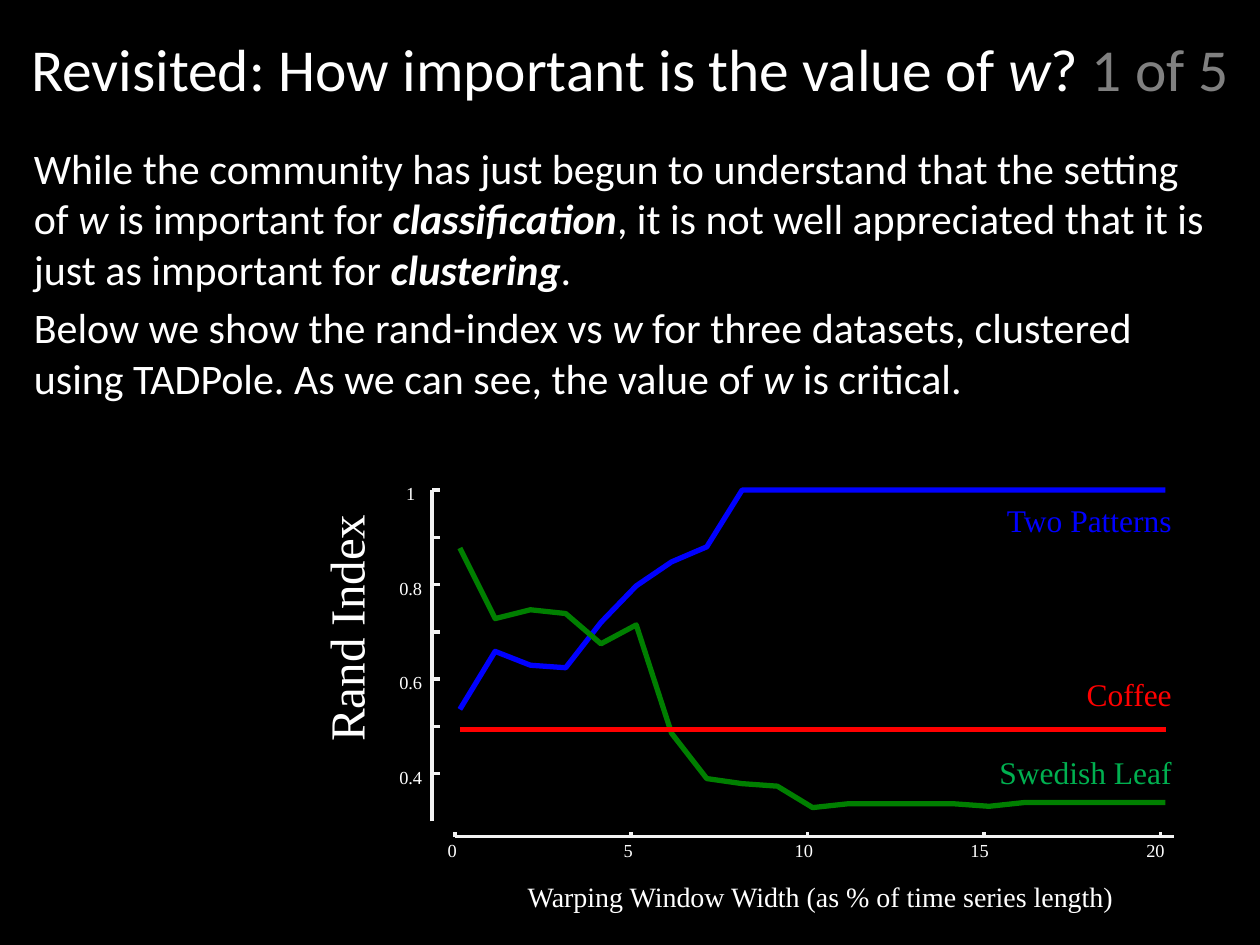
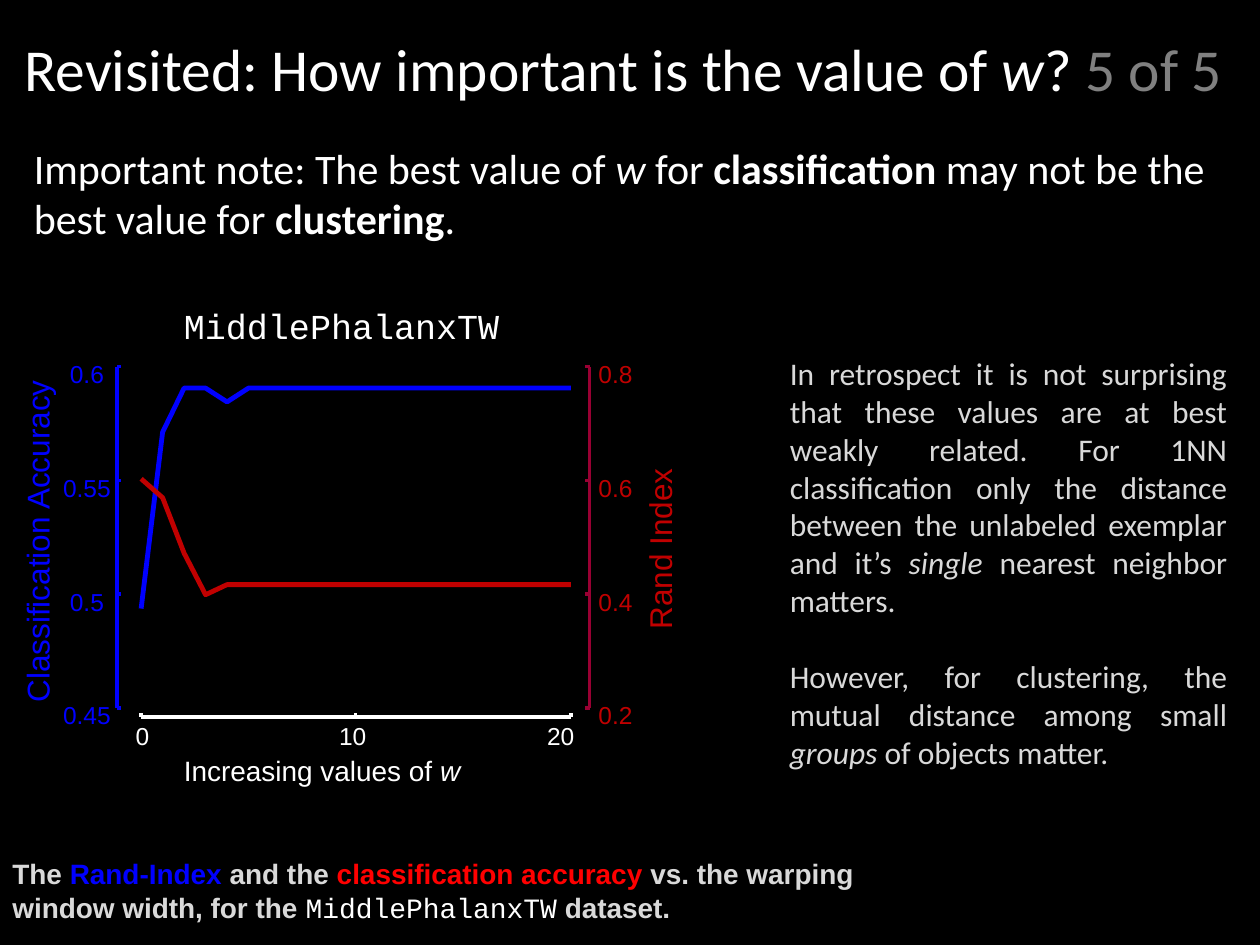
from pptx import Presentation
from pptx.util import Inches, Pt
from pptx.dml.color import RGBColor
from pptx.enum.shapes import MSO_CONNECTOR
from pptx.enum.text import PP_ALIGN, MSO_ANCHOR
from lxml import etree

HUES = {
    "black": "000000", "white": "FFFFFF", "pale": "F2F2F2", "light": "D9D9D9",
    "gray": "808080", "blue": "0000FF", "green": "007F00", "leaf": "00B050",
    "red": "FF0000", "dark": "C00000", "wine": "990033",
}
COLORS = {name: RGBColor.from_string(code) for name, code in HUES.items()}
BODY, SERIF, SANS, MONO = "Calibri", "Times New Roman", "Arial", "Courier New"
LEFT, MID, RIGHT, FULL = PP_ALIGN.LEFT, PP_ALIGN.CENTER, PP_ALIGN.RIGHT, PP_ALIGN.JUSTIFY


def write(slide, box, paras, size, font, color="white", align=LEFT,
          inset=0, anchor=MSO_ANCHOR.TOP, gap=0, turn=0):
    """Add a text box; each run is (text, flags, colour, font), the last three optional."""
    shape = slide.shapes.add_textbox(*map(Inches, box))
    shape.rotation = turn
    frame = shape.text_frame
    frame.word_wrap = True
    frame.vertical_anchor = anchor
    frame.margin_left = frame.margin_right = Inches(inset)
    frame.margin_top = frame.margin_bottom = Inches(inset / 2)
    for i, runs in enumerate(paras):
        para = frame.add_paragraph() if i else frame.paragraphs[0]
        para.alignment = align
        para.space_before = Pt(gap if i else 0)
        for part in runs:
            text, flags, hue, face = (*part, *("", color, font)[len(part) - 1:])
            run = para.add_run()
            run.text = text
            run.font.size = Pt(size)
            run.font.name = face
            run.font.color.rgb = COLORS[hue]
            run.font.bold = "b" in flags
            run.font.italic = "i" in flags


def rule(slide, x1, y1, x2, y2, color, width=0):
    line = slide.shapes.add_connector(MSO_CONNECTOR.STRAIGHT, *map(Inches, (x1, y1, x2, y2)))
    line.line.color.rgb = COLORS[color]
    line.line.width = Pt(width)
    props = line._element.spPr
    etree.SubElement(props, props.tag.replace("spPr", "effectLst").replace(
        "presentationml", "drawingml"))


deck = Presentation()
deck.slide_width, deck.slide_height = Inches(10), Inches(7.5)

# Titles and body text
pages = [
    ("1 of 5", [
        [("While the community has just begun to understand that the setting of ",), ("w", "i"),
         (" is important for ",), ("classification", "bi"),
         (", it is not well appreciated that it is just as important for ",),
         ("clustering", "bi"), (".",)],
        [("Below we show the rand-index vs ",), ("w", "i"),
         (" for three datasets, clustered using TADPole. As we can see, the value of ",),
         ("w", "i"), (" is critical.",)],
    ]),
    ("5 of 5 ", [
        [("Important note: The best value of ",), ("w", "i"), (" for ",),
         ("classification", "b"), (" may not be the best value for ",),
         ("clustering", "b"), (".",)],
    ]),
]
slides = []
for count, paras in pages:
    slide = deck.slides.add_slide(deck.slide_layouts[6])
    slide.background.fill.solid()
    slide.background.fill.fore_color.rgb = COLORS["black"]
    title = [("Revisited: How important is the value of ",), ("w", "i"), ("? ",),
             (count, "", "gray")]
    write(slide, (0, 0, 10, 1.08), [title], 34, BODY, align=MID, inset=0.1,
          anchor=MSO_ANCHOR.MIDDLE)
    write(slide, (0.17, 1.08, 9.58, 2.58), paras, 24, BODY, inset=0.1, gap=4.8)
    slides.append(slide)
first, last = slides

# First slide: axes, ticks and labels
rule(first, 3.61, 6.64, 9.32, 6.64, "pale")
rule(first, 3.43, 6.52, 3.43, 3.89, "pale")
for i in range(5):
    x = 3.61 + 1.4 * i
    rule(first, x, 6.64, x, 6.6, "pale")
    write(first, (3.34 + 1.395 * i, 6.66, 0.5, 0.18), [[(str(5 * i),)]], 10.5, SERIF, align=MID)
for i in range(7):
    y = 3.89 + 0.375 * i
    rule(first, 3.43, y, 3.49, y, "pale")
for i, label in enumerate(["1", "0.8", "0.6", "0.4"]):
    write(first, (3.06, 3.83 + 0.75 * i, 0.4, 0.18), [[(label,)]], 10.5, SERIF, align=MID)
write(first, (1.62, 4.97, 2.24, 0.47), [[("Rand Index",)]], 28, SERIF, align=RIGHT, turn=270)
write(first, (3.5, 6.98, 5.39, 0.27),
      [[("Warping Window Width (as % of time series length) ",)]], 16, SERIF, align=RIGHT)

# Last slide: axes, ticks and labels
rule(last, 1.12, 5.69, 4.53, 5.69, "white")
for x, mid, label in [(1.12, 1.13, "0"), (2.82, 2.8, "10"), (4.53, 4.45, "20")]:
    rule(last, x, 5.69, x, 5.66, "white")
    write(last, (mid - 0.25, 5.72, 0.5, 0.24), [[(label,)]], 14, SANS, align=MID)
sides = [
    (0.93, 0.96, "blue", 0.44, "blue", MID, ["0.6", "0.55", "0.5", "0.45"]),
    (4.68, 4.64, "wine", 4.75, "dark", LEFT, ["0.8", "0.6", "0.4", "0.2"]),
]
for x, end, ink, left, hue, align, labels in sides:
    rule(last, x, 5.62, x, 2.91, ink)
    for i, label in enumerate(labels):
        y = 2.91 + 0.903 * i
        rule(last, x, y, end, y, ink)
        write(last, (left, y - 0.06, 0.5, 0.24), [[(label,)]], 14, SANS, hue, align)
write(last, (-1.19, 3.94, 2.97, 0.3), [[("Classification Accuracy",)]], 18, SANS, "blue", turn=270)
write(last, (4.32, 3.93, 1.83, 0.3), [[("Rand Index",)]], 18, SANS, "dark", turn=270)
write(last, (1.46, 2.42, 3, 0.34), [[("MiddlePhalanxTW",)]], 20, MONO)
write(last, (1.46, 5.98, 3.21, 0.27), [[("Increasing values of ",), ("w", "i")]], 16, SANS)

# Curves: one height for each window width from 0 to 20
curves = [
    (first, "blue", 3, 3.65, 0.28,
     [5.63, 5.17, 5.28, 5.3, 4.94, 4.65, 4.46, 4.34] + [3.89] * 13),
    (first, "green", 3, 3.65, 0.28,
     [4.35, 4.91, 4.84, 4.87, 5.11, 4.96, 5.82, 6.18, 6.22, 6.24, 6.41]
     + [6.38] * 4 + [6.4] + [6.37] * 5),
    (last, "blue", 2.75, 1.12, 0.1705, [4.83, 3.43, 3.08, 3.08, 3.19] + [3.08] * 16),
    (last, "dark", 2.75, 1.12, 0.1705, [3.8, 3.95, 4.39, 4.72] + [4.64] * 17),
]
for slide, hue, width, left, step, heights in curves:
    points = [(Inches(left + step * i), Inches(y)) for i, y in enumerate(heights)]
    pen = slide.shapes.build_freeform(*points[0])
    pen.add_line_segments(points[1:], close=False)
    curve = pen.convert_to_shape()
    curve.shadow.inherit = False
    curve.fill.background()
    curve.line.color.rgb = COLORS[hue]
    curve.line.width = Pt(width)
rule(first, 3.65, 5.79, 9.25, 5.79, "red", 3)
for name, y, hue in [("Two Patterns", 3.98, "blue"), ("Coffee", 5.36, "red"),
                     ("Swedish Leaf", 5.98, "leaf")]:
    write(first, (7.57, y, 1.73, 0.3), [[(name,)]], 18, SERIF, hue, RIGHT)

# Last slide: remarks and caption
remarks = [
    [("In retrospect it is not surprising that these values are at best weakly related. "
      "For 1NN classification only the distance between the unlabeled exemplar and it’s ",),
     ("single", "i"), (" nearest neighbor matters. ",)],
    [("However, for clustering, the mutual distance among small ",), ("groups", "i"),
     (" of objects matter.",)],
]
write(last, (6.17, 2.75, 3.67, 3.43), remarks, 18, BODY, "light", FULL, inset=0.1,
      anchor=MSO_ANCHOR.MIDDLE, gap=22)
caption = [("The ", "b"), ("Rand-Index", "b", "blue"), (" and the ", "b"),
           ("classification accuracy", "b", "red"),
           (" vs. the warping window width, for the ", "b"),
           ("MiddlePhalanxTW", "", "white", MONO), (" dataset.", "b")]
write(last, (0, 6.75, 7.58, 0.64), [caption], 16, SANS, "light", inset=0.1)

deck.save("out.pptx")
